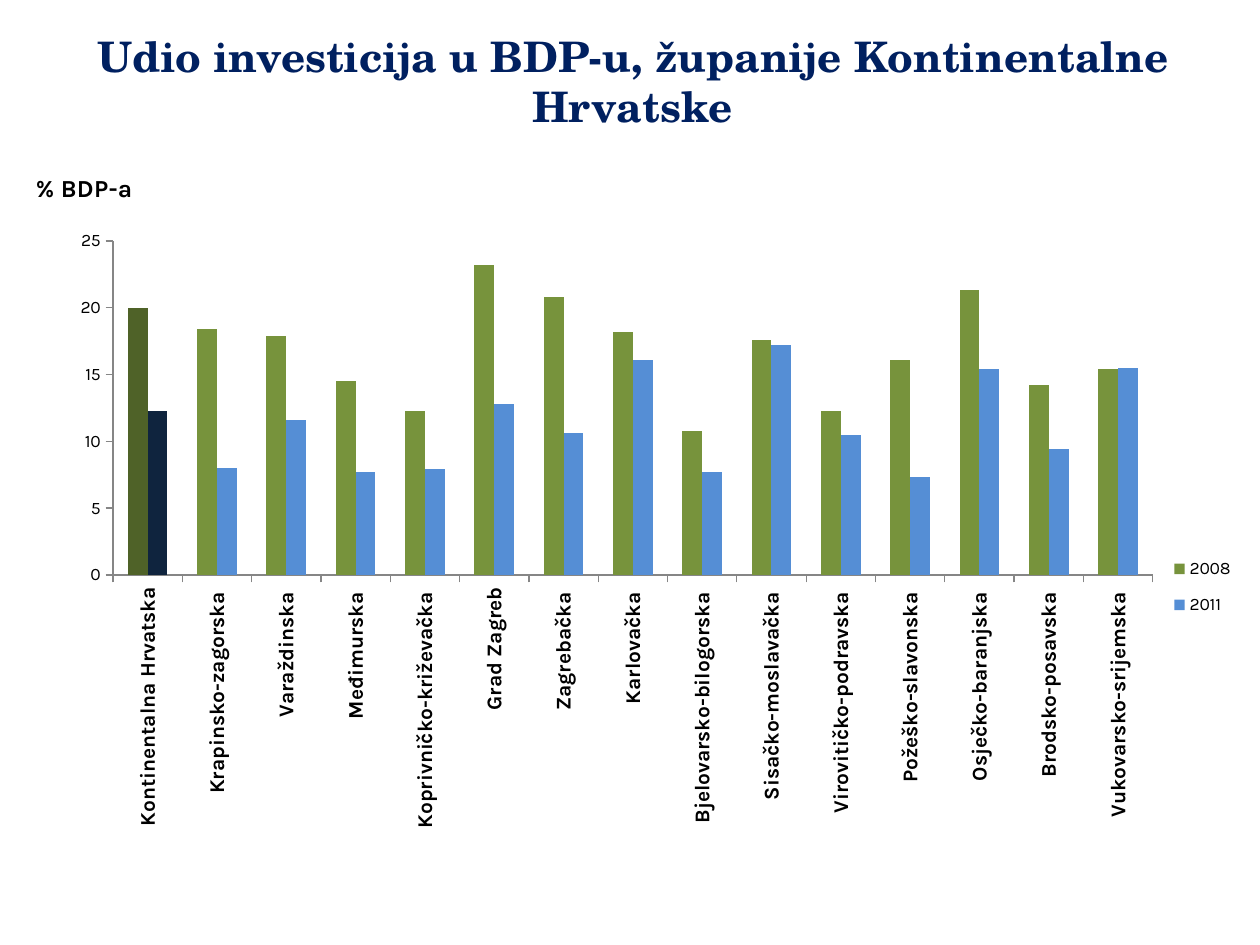
from lxml import etree
from pptx import Presentation
from pptx.chart.data import CategoryChartData
from pptx.dml.color import RGBColor
from pptx.enum.chart import XL_CHART_TYPE, XL_LEGEND_POSITION, XL_TICK_MARK
from pptx.enum.text import MSO_ANCHOR, PP_ALIGN
from pptx.oxml import parse_xml
from pptx.oxml.ns import nsdecls, qn
from pptx.util import Pt

COLUMNS = XL_CHART_TYPE.COLUMN_CLUSTERED
RIGHT = XL_LEGEND_POSITION.RIGHT
OUTSIDE = XL_TICK_MARK.OUTSIDE
NO_TICK = XL_TICK_MARK.NONE
MIDDLE = MSO_ANCHOR.MIDDLE
CENTER = PP_ALIGN.CENTER

# Content
TITLE = "Udio investicija u BDP-u, županije Kontinentalne Hrvatske"
AXIS_TITLE = "% BDP-a"
COUNTIES = [
    "Kontinentalna Hrvatska", "Krapinsko-zagorska ", "Varaždinska ", "Međimurska ",
    "Koprivničko-križevačka ", "Grad Zagreb", "Zagrebačka ", "Karlovačka ",
    "Bjelovarsko-bilogorska ", "Sisačko-moslavačka ", "Virovitičko-podravska ",
    "Požeško-slavonska ", "Osječko-baranjska ", "Brodsko-posavska ",
    "Vukovarsko-srijemska ",
]
# Year, values, column colour, colour of the first (regional) column
SERIES = [
    ("2008", [20, 18.4, 17.9, 14.5, 12.3, 23.2, 20.8, 18.2, 10.8, 17.6, 12.3, 16.1,
              21.3, 14.2, 15.4], "77933C", "4F6228"),
    ("2011", [12.3, 8, 11.6, 7.7, 7.9, 12.8, 10.6, 16.1, 7.7, 17.2, 10.5, 7.3,
              15.4, 9.4, 15.5], "558ED5", "0F243E"),
]

# Places in px
PX = 914400 // 126
PAGE = (1260, 945)
TITLE_BOX = (5, 6, 1255, 149)
CHART_BOX = (15, 155, 1245, 746)
PLOT_AREA = (113, 241, 1040, 334)
AXIS_TITLE_AT = (31, 168)
LEGEND_BOX = (1165, 543, 75, 88)

# Formats
TITLE_FONT = {"name": "TeX Gyre Schola", "size": Pt(24), "bold": True}
CHART_FONT = {"name": "Karla", "size": Pt(10), "bold": False}
LABEL_FONT = {"name": "Karla", "size": Pt(12), "bold": True}
AXIS_TITLE_FONT = {"name": "Karla", "size": Pt(14), "bold": True}


def emu(lengths):
    return [length * PX for length in lengths]


def paint(target, color):
    target.solid()
    target.fore_color.rgb = RGBColor.from_string(color)


def style(font, formats, color="000000"):
    for name, value in formats.items():
        setattr(font, name, value)
    paint(font.fill, color)


def place(parent, index, box, inner=False):
    """Give a chart part a manual layout, as fractions of the chart."""
    for old in parent.findall(qn("c:layout")):
        parent.remove(old)
    left, top, width, height = CHART_BOX
    values = [(box[0] - left) / width, (box[1] - top) / height]
    if len(box) == 4:
        values += [box[2] / width, box[3] / height]
    layout = etree.Element(qn("c:layout"))
    manual = etree.SubElement(layout, qn("c:manualLayout"))
    entries = [("layoutTarget", "inner")] if inner else []
    entries += [("xMode", "edge"), ("yMode", "edge")]
    entries += [(name, f"{value:.4f}") for name, value in zip("xywh", values)]
    for name, value in entries:
        etree.SubElement(manual, qn(f"c:{name}")).set("val", value)
    parent.insert(index, layout)


def rotate(body, angle):
    body.set("rot", str(angle * 60000))
    body.set("vert", "horz")


deck = Presentation()
deck.slide_width, deck.slide_height = emu(PAGE)
page = deck.slides.add_slide(deck.slide_layouts[6])

# Title
box = page.shapes.add_textbox(*emu(TITLE_BOX))
paint(box.fill, "FFFFFF")
frame = box.text_frame
frame.word_wrap = True
frame.vertical_anchor = MIDDLE
para = frame.paragraphs[0]
para.alignment = CENTER
span = para.add_run()
span.text = TITLE
style(span.font, TITLE_FONT, "002060")

# Chart
data = CategoryChartData()
data.categories = COUNTIES
for year, values, *_ in SERIES:
    data.add_series(year, values)
chart = page.shapes.add_chart(COLUMNS, *emu(CHART_BOX), data).chart
chart.has_title = False
style(chart.font, CHART_FONT)
chart.font._element.getparent().getparent().getparent().addprevious(parse_xml(
    f'<c:spPr {nsdecls("c", "a")}><a:solidFill><a:srgbClr val="FFFFFF"/></a:solidFill>'
    '<a:ln><a:noFill/></a:ln></c:spPr>') ) if hasattr(chart.font, "_element") else None

# Columns
plot = chart.plots[0]
plot.gap_width = 150
plot.overlap = 0
plot.vary_by_categories = False
for series, (_, _, color, first_color) in zip(plot.series, SERIES):
    series.invert_if_negative = False
    paint(series.format.fill, color)
    paint(series.points[0].format.fill, first_color)

# Axes
counties, shares = chart.category_axis, chart.value_axis
for axis, font in ((counties, LABEL_FONT), (shares, CHART_FONT)):
    axis.has_major_gridlines = False
    axis.major_tick_mark = OUTSIDE
    axis.minor_tick_mark = NO_TICK
    paint(axis.format.line.fill, "868686")
    axis.format.line.width = Pt(0.75)
    style(axis.tick_labels.font, font)
rotate(counties._element.find(qn("c:txPr")).find(qn("a:bodyPr")), -90)
shares.minimum_scale, shares.maximum_scale, shares.major_unit = 0, 25, 5
shares.tick_labels.number_format = "#,##0"
shares.tick_labels.number_format_is_linked = False

# Axis title, set level above the axis
heading = shares.axis_title.text_frame
span = heading.paragraphs[0].add_run()
span.text = AXIS_TITLE
style(span.font, AXIS_TITLE_FONT)
rotate(heading._txBody.find(qn("a:bodyPr")), 0)
place(shares.axis_title._element, 1, AXIS_TITLE_AT)

# Legend and plot area
chart.has_legend = True
legend = chart.legend
legend.position = RIGHT
legend.include_in_layout = False
style(legend.font, CHART_FONT)
place(legend._element, 1, LEGEND_BOX)
place(chart._chartSpace.chart.plotArea, 0, PLOT_AREA, inner=True)

deck.save("out.pptx")
